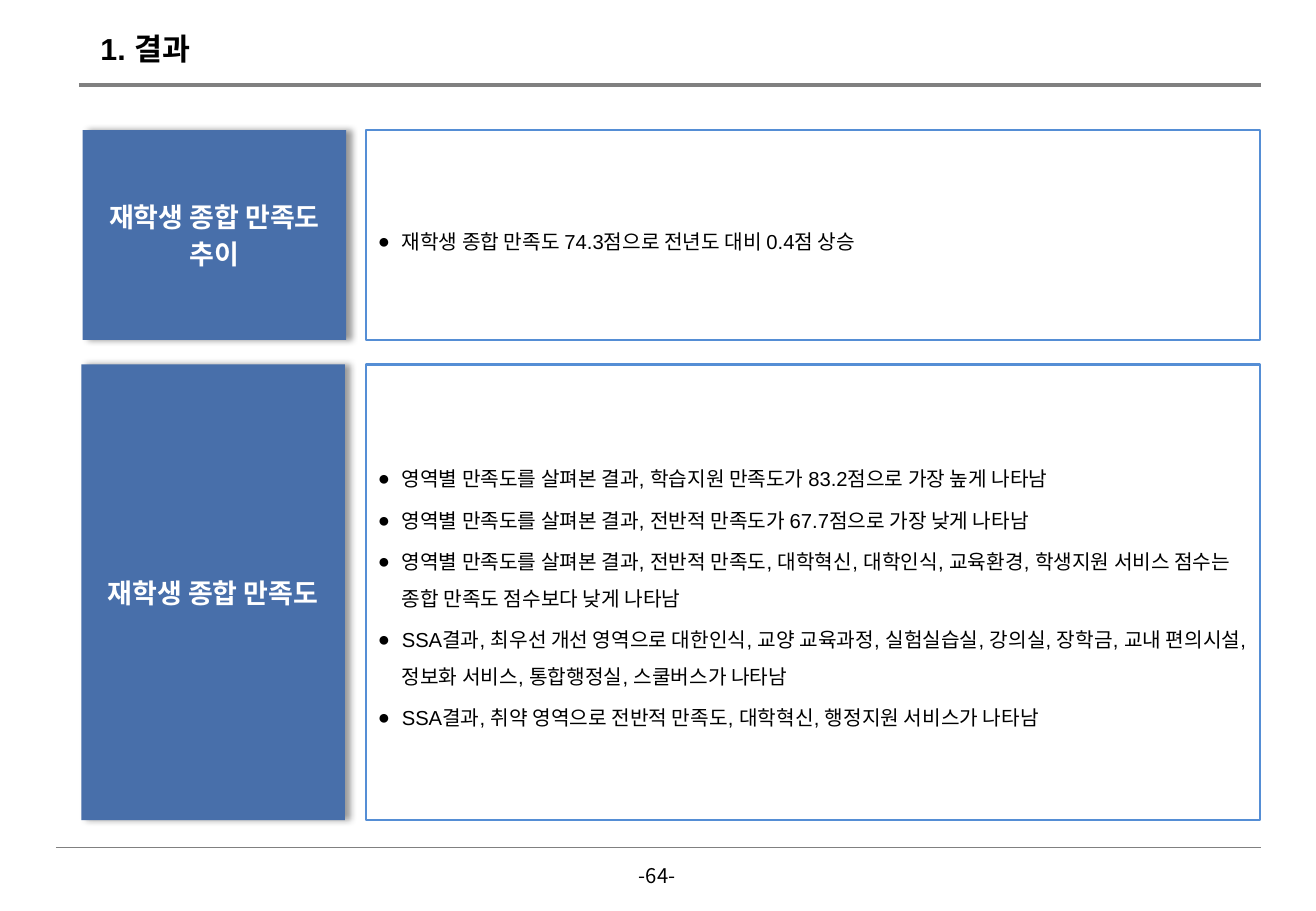
import pptx
import pptx.util
import pptx.dml.color
import pptx.enum.shapes
import pptx.enum.text
import pptx.oxml
import pptx.oxml.ns
from dataclasses import dataclass

Cm = pptx.util.Cm
Pt = pptx.util.Pt
ALIGN = pptx.enum.text.PP_ALIGN
ANCHOR = pptx.enum.text.MSO_ANCHOR

HEADING = "1. 결과"
PAGE_NUMBER = "-64-"
FINDINGS = [
    {
        "topic": ["재학생 종합 만족도", "추이"],
        "points": ["재학생 종합 만족도 74.3점으로 전년도 대비 0.4점 상승"],
        "topic_left": 1.73, "top": 2.72, "height": 4.39,
    },
    {
        "topic": ["재학생 종합 만족도"],
        "points": [
            "영역별 만족도를 살펴본 결과, 학습지원 만족도가 83.2점으로 가장 높게 나타남",
            "영역별 만족도를 살펴본 결과, 전반적 만족도가 67.7점으로 가장 낮게 나타남",
            "영역별 만족도를 살펴본 결과, 전반적 만족도, 대학혁신, 대학인식, 교육환경, 학생지원 서비스 점수는 종합 만족도 점수보다 낮게 나타남",
            "SSA결과, 최우선 개선 영역으로 대한인식, 교양 교육과정, 실험실습실, 강의실, 장학금, 교내 편의시설, 정보화 서비스, 통합행정실, 스쿨버스가 나타남",
            "SSA결과, 취약 영역으로 전반적 만족도, 대학혁신, 행정지원 서비스가 나타남",
        ],
        "topic_left": 1.7, "top": 7.62, "height": 9.53,
    },
]
RIGHT_EDGE = 26.37
RULES = [(1.65, 1.78, 2), (1.17, 17.73, 0.5)]
TOPIC_WIDTH = 5.51
POINTS_LEFT, POINTS_WIDTH = 7.65, 18.69


@dataclass(frozen=True)
class Theme:
    latin: str = "Arial"
    korean: str = "Noto Sans CJK KR"
    ink: str = "000000"
    paper: str = "FFFFFF"
    rule: str = "808080"
    topic: str = "486FAA"
    frame: str = "558ED5"
    heading_size: int = 18
    topic_size: int = 16
    body_size: int = 12


THEME = Theme()


def rgb(code):
    return pptx.dml.color.RGBColor.from_string(code)


def add_xml(parent, xml):
    parent.append(pptx.oxml.parse_xml(
        xml.replace("/>", f' {pptx.oxml.ns.nsdecls("a")}/>', 1) if xml.endswith("/>") and xml.count("<") == 1
        else xml.replace(">", f' {pptx.oxml.ns.nsdecls("a")}>', 1)))


def write(holder, lines, size, color=THEME.ink, bold=False, font=THEME.latin,
          align=ALIGN.LEFT, anchor=ANCHOR.TOP, wrap=True, bullet=None, spacing=None):
    frame = holder.text_frame
    frame.word_wrap = wrap
    frame.vertical_anchor = anchor
    for index, line in enumerate(lines):
        paragraph = frame.add_paragraph() if index else frame.paragraphs[0]
        paragraph.alignment = align
        if index:
            paragraph.space_before = Pt(3)
        if spacing:
            paragraph.line_spacing = spacing
        if bullet:
            properties = paragraph._p.get_or_add_pPr()
            properties.set("marL", str(Cm(0.5)))
            properties.set("indent", str(-Cm(0.5)))
            add_xml(properties, f'<a:buFont typeface="{THEME.latin}"/>')
            add_xml(properties, f'<a:buChar char="{bullet}"/>')
        run = paragraph.add_run()
        run.text = line
        run.font.size = Pt(size)
        run.font.bold = bold
        run.font.color.rgb = rgb(color)
        run.font.name = font
        add_xml(run._r.get_or_add_rPr(), f'<a:ea typeface="{THEME.korean}"/>')


def add_rule(slide, left, top, weight):
    rule = slide.shapes.add_connector(
        pptx.enum.shapes.MSO_CONNECTOR.STRAIGHT, Cm(left), Cm(top), Cm(RIGHT_EDGE), Cm(top))
    rule.line.color.rgb = rgb(THEME.rule)
    rule.line.width = Pt(weight)
    add_xml(rule._element.spPr, "<a:effectLst/>")


def add_panel(slide, left, top, width, height):
    panel = slide.shapes.add_shape(
        pptx.enum.shapes.MSO_SHAPE.RECTANGLE, Cm(left), Cm(top), Cm(width), Cm(height))
    panel.shadow.inherit = False
    return panel


def add_finding(slide, finding):
    top, height = finding["top"], finding["height"]
    topic = add_panel(slide, finding["topic_left"], top, TOPIC_WIDTH, height)
    topic.fill.solid()
    topic.fill.fore_color.rgb = rgb(THEME.topic)
    topic.line.fill.background()
    effects = topic._element.spPr.find(pptx.oxml.ns.qn("a:effectLst"))
    add_xml(effects, f'<a:outerShdw blurRad="{Pt(4)}" dist="{Pt(3)}" dir="0" algn="l" rotWithShape="0">'
                     f'<a:srgbClr val="{THEME.ink}"><a:alpha val="40000"/></a:srgbClr></a:outerShdw>')
    write(topic, finding["topic"], THEME.topic_size, color=THEME.paper, bold=True,
          align=ALIGN.CENTER, anchor=ANCHOR.MIDDLE)

    points = add_panel(slide, POINTS_LEFT, top, POINTS_WIDTH, height)
    points.fill.background()
    points.line.color.rgb = rgb(THEME.frame)
    points.line.width = Pt(1.5)
    write(points, finding["points"], THEME.body_size, anchor=ANCHOR.MIDDLE, bullet="●", spacing=1.5)


def main():
    deck = pptx.Presentation()
    deck.slide_width, deck.slide_height = Cm(27.51), Cm(19.05)
    slide = deck.slides.add_slide(deck.slide_layouts[6])
    for rule in RULES:
        add_rule(slide, *rule)
    heading = slide.shapes.add_textbox(Cm(1.85), Cm(0.51), Cm(2.57), Cm(1.02))
    write(heading, [HEADING], THEME.heading_size, bold=True, wrap=False)
    page_number = slide.shapes.add_textbox(Cm(13.08), Cm(17.93), Cm(1.32), Cm(0.76))
    write(page_number, [PAGE_NUMBER], THEME.body_size, font=THEME.korean, align=ALIGN.CENTER, wrap=False)
    for finding in FINDINGS:
        add_finding(slide, finding)
    deck.save("out.pptx")


if __name__ == "__main__":
    main()
